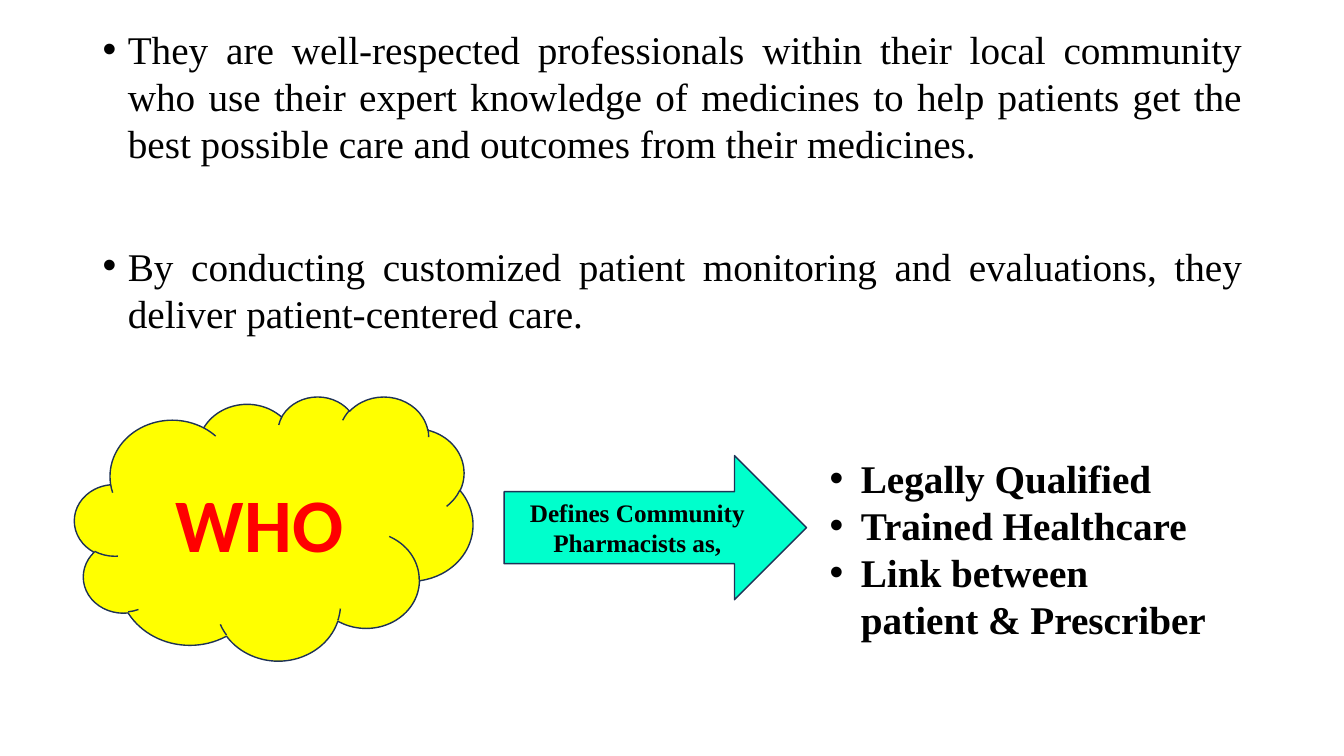
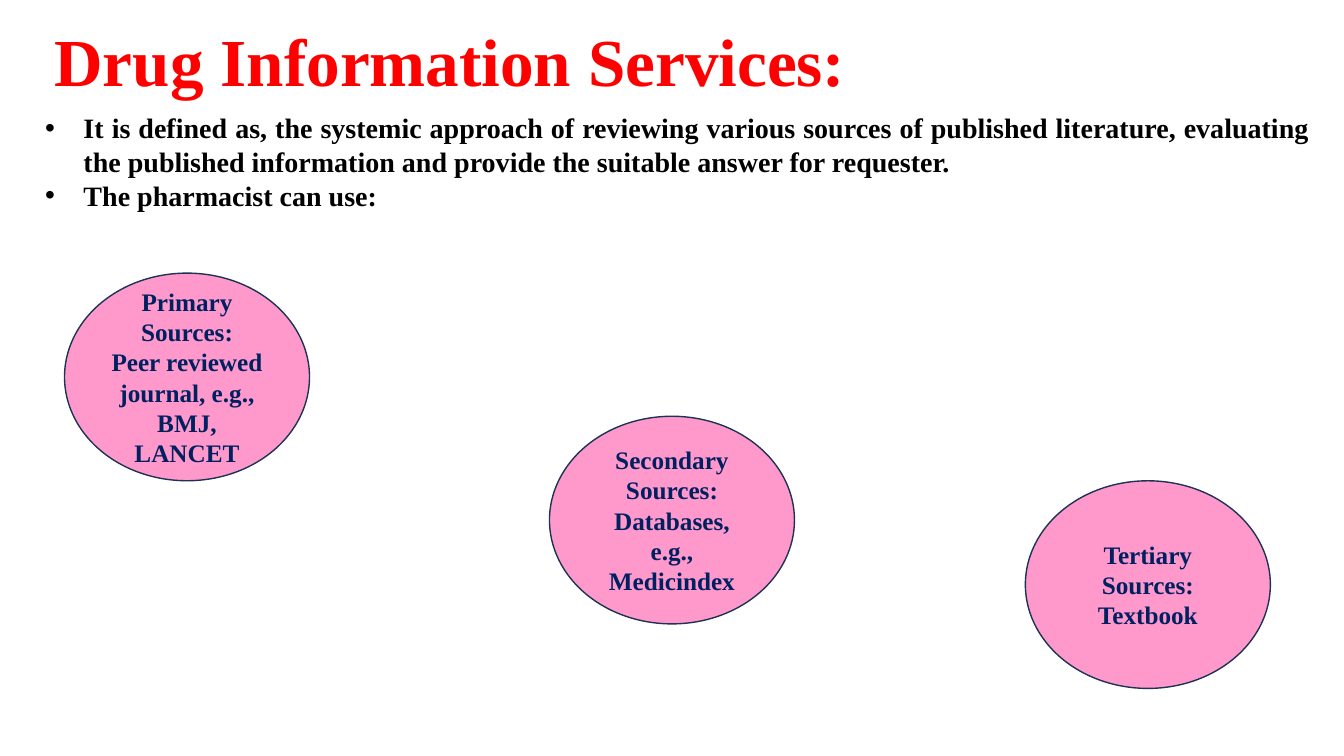
from lxml import etree
from pptx import Presentation
from pptx.dml.color import RGBColor
from pptx.enum import shapes, text
from pptx.oxml import ns
from pptx.util import Emu, Pt

EMU_PER_PX = 9144
COLORS = {
    "black": "000000",
    "white": "FFFFFF",
    "red": "FF0000",
    "navy": "002060",
    "outline": "1E3256",
    "yellow": "FFFF00",
    "aqua": "00FFCC",
    "pink": "FF99CC",
}
SERIF = "Times New Roman"
SANS = "Calibri"
TITLE_ONLY, BLANK = 5, 6
LEFT, CENTER, JUSTIFY = text.PP_ALIGN.LEFT, text.PP_ALIGN.CENTER, text.PP_ALIGN.JUSTIFY


def px(length):
    return Emu(length * EMU_PER_PX)


def color(name):
    return RGBColor.from_string(COLORS[name])


class Deck:
    def __init__(self, width, height):
        self.presentation = Presentation()
        self.presentation.slide_width = px(width)
        self.presentation.slide_height = px(height)
        self.slide = None

    def add_slide(self, layout):
        layouts = self.presentation.slide_layouts
        self.slide = self.presentation.slides.add_slide(layouts[layout])

    def set_text(self, shape, lines, size, ink="black", font=SERIF, bold=True,
                 align=LEFT, anchor=text.MSO_ANCHOR.TOP, indent=0, gap=0):
        frame = shape.text_frame
        frame.word_wrap = True
        frame.auto_size = text.MSO_AUTO_SIZE.NONE
        frame.vertical_anchor = anchor
        frame.text = "\n".join(lines)
        for index, paragraph in enumerate(frame.paragraphs):
            paragraph.alignment = align
            paragraph.space_before = Pt(gap if index else 0)
            if indent:
                self.add_bullet(paragraph, indent)
            paragraph.font.name = font
            paragraph.font.size = Pt(size)
            paragraph.font.bold = bold
            paragraph.font.color.rgb = color(ink)

    def add_bullet(self, paragraph, indent):
        properties = paragraph._p.get_or_add_pPr()
        properties.set("marL", str(px(indent)))
        properties.set("indent", str(px(-indent)))
        etree.SubElement(properties, ns.qn("a:buFont")).set("typeface", "Arial")
        etree.SubElement(properties, ns.qn("a:buChar")).set("char", "•")

    def title(self, box, caption):
        title = self.slide.shapes.title
        title.left, title.top, title.width, title.height = map(px, box)
        self.set_text(title, [caption], 48, ink="red")

    def bullets(self, box, lines, size, **style):
        textbox = self.slide.shapes.add_textbox(*map(px, box))
        self.set_text(textbox, lines, size, **style)

    def shape(self, preset, box, lines, size, fill, outline="outline", align=CENTER, **style):
        shape = self.slide.shapes.add_shape(preset, *map(px, box))
        shape.shadow.inherit = False
        shape.fill.solid()
        shape.fill.fore_color.rgb = color(fill)
        if outline:
            shape.line.color.rgb = color(outline)
            shape.line.width = Pt(1)
        else:
            shape.line.fill.background()
        self.set_text(shape, lines, size, align=align, anchor=text.MSO_ANCHOR.MIDDLE, **style)


def build_definition(deck):
    deck.add_slide(BLANK)
    deck.bullets((92, 20, 1150, 688), [
        "They are well-respected professionals within their local community who use their "
        "expert knowledge of medicines to help patients get the best possible care and "
        "outcomes from their medicines.",
        "By conducting customized patient monitoring and evaluations, they deliver "
        "patient-centered care.",
    ], 28, bold=False, align=JUSTIFY, indent=25, gap=54)
    preset = shapes.MSO_SHAPE
    deck.shape(preset.CLOUD, (74, 393, 395, 262), ["WHO"], 54, "yellow", ink="red", font=SANS)
    deck.shape(preset.RIGHT_ARROW, (500, 452, 300, 143),
               ["Defines Community Pharmacists as,"], 18, "aqua")
    deck.shape(preset.RECTANGLE, (813, 393, 395, 302), [
        "Legally Qualified",
        "Trained Healthcare",
        "Link between patient & Prescriber",
    ], 28, "white", outline=None, align=LEFT, indent=31)


def build_information_services(deck):
    deck.add_slide(TITLE_ONLY)
    deck.title((44, 14, 1077, 91), "Drug Information Services:")
    deck.bullets((35, 105, 1274, 145), [
        "It is defined as, the systemic approach of reviewing various sources of published "
        "literature, evaluating the published information and provide the suitable answer "
        "for requester.",
        "The pharmacist can use:",
    ], 20, align=JUSTIFY, indent=38)
    sources = [
        (64, 271, "Primary", "Peer reviewed journal, e.g., BMJ, LANCET"),
        (545, 413, "Secondary", "Databases, e.g., Medicindex"),
        (1017, 477, "Tertiary", "Textbook"),
    ]
    for left, top, rank, examples in sources:
        deck.shape(shapes.MSO_SHAPE.OVAL, (left, top, 243, 206),
                   [f"{rank} Sources:", examples], 18, "pink", ink="navy")


def main():
    deck = Deck(1333, 750)
    build_definition(deck)
    build_information_services(deck)
    deck.presentation.save("out.pptx")


if __name__ == "__main__":
    main()
